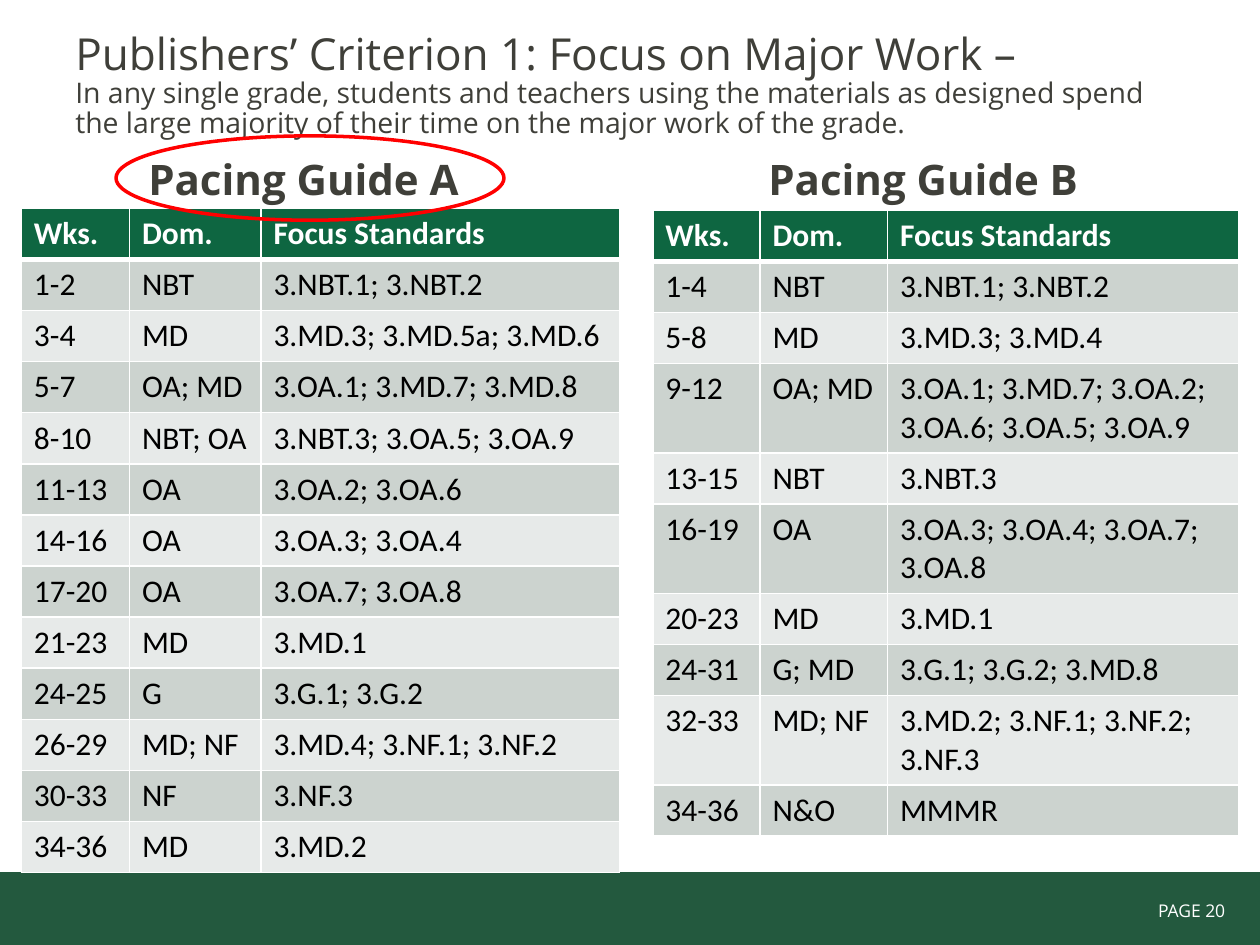
from lxml.etree import SubElement
from pptx import Presentation
from pptx.dml.color import RGBColor
from pptx.enum.shapes import MSO_SHAPE
from pptx.enum.text import MSO_ANCHOR, PP_ALIGN
from pptx.oxml.ns import qn
from pptx.util import Cm, Pt

COLORS = {
    "footer": "23593E", "header": "0E6641", "odd": "CCD3CF", "even": "E7EAE9",
    "ink": "3F3F39", "black": "000000", "white": "FFFFFF", "ring": "FF0000",
}
ROW, TALL_ROW = 1.03, 1.8
ONE_LINE_CHARS = 25
HEADER = ("Wks.", "Dom.", "Focus Standards")
GUIDE_A = [
    ("1-2", "NBT", "3.NBT.1; 3.NBT.2"),
    ("3-4", "MD", "3.MD.3; 3.MD.5a; 3.MD.6"),
    ("5-7", "OA; MD", "3.OA.1; 3.MD.7; 3.MD.8"),
    ("8-10", "NBT; OA", "3.NBT.3; 3.OA.5; 3.OA.9"),
    ("11-13", "OA", "3.OA.2; 3.OA.6"),
    ("14-16", "OA", "3.OA.3; 3.OA.4"),
    ("17-20", "OA", "3.OA.7; 3.OA.8"),
    ("21-23", "MD", "3.MD.1"),
    ("24-25", "G", "3.G.1; 3.G.2"),
    ("26-29", "MD; NF", "3.MD.4; 3.NF.1; 3.NF.2"),
    ("30-33", "NF", "3.NF.3"),
    ("34-36", "MD", "3.MD.2"),
]
GUIDE_B = [
    ("1-4", "NBT", "3.NBT.1; 3.NBT.2"),
    ("5-8", "MD", "3.MD.3; 3.MD.4"),
    ("9-12", "OA; MD", "3.OA.1; 3.MD.7; 3.OA.2; 3.OA.6; 3.OA.5; 3.OA.9"),
    ("13-15", "NBT", "3.NBT.3"),
    ("16-19", "OA", "3.OA.3; 3.OA.4; 3.OA.7; 3.OA.8"),
    ("20-23", "MD", "3.MD.1"),
    ("24-31", "G; MD", "3.G.1; 3.G.2; 3.MD.8"),
    ("32-33", "MD; NF", "3.MD.2; 3.NF.1; 3.NF.2; 3.NF.3"),
    ("34-36", "N&O", "MMMR"),
]


def rgb(name):
    return RGBColor.from_string(COLORS[name])


def style(run, size, color, font="Open Sans", bold=False):
    run.font.size = Pt(size)
    run.font.name = font
    run.font.bold = bold
    run.font.color.rgb = rgb(color)


def add_text(slide, box, text, sizes, color, anchor, bold=False):
    frame = slide.shapes.add_textbox(*map(Cm, box)).text_frame
    frame.word_wrap = True
    frame.vertical_anchor = anchor
    paragraph = frame.paragraphs[0]
    paragraph.text = text
    for run, size in zip(paragraph.runs, sizes):
        style(run, size, color, bold=bold)
    return frame


def add_title(slide, box):
    title = add_text(
        slide, box,
        "Publishers’ Criterion 1: Focus on Major Work –\v"
        "In any single grade, students and teachers using the materials as "
        "designed spend the large majority of their time on the major work of the grade.",
        (25.2, 16.2), "ink", MSO_ANCHOR.MIDDLE)
    title.margin_top = Cm(0.3)
    title.paragraphs[0].line_spacing = 0.88


def set_borders(cell, widths):
    properties = cell._tc.get_or_add_tcPr()
    for position, (side, width) in enumerate(widths.items()):
        border = SubElement(properties, qn(f"a:ln{side}"), w=str(Pt(width)))
        fill = SubElement(border, qn("a:solidFill"))
        SubElement(fill, qn("a:srgbClr"), val=COLORS["white"])
        properties.insert(position, border)


def add_guide(slide, box, name, heading_box, column_widths, weeks):
    add_text(slide, heading_box, name, (24,), "ink", MSO_ANCHOR.BOTTOM, bold=True)
    rows = [HEADER] + weeks
    heights = [TALL_ROW if len(row[2]) > ONE_LINE_CHARS else ROW for row in rows]
    left, top = box
    table = slide.shapes.add_table(
        len(rows), len(HEADER), Cm(left), Cm(top),
        Cm(sum(column_widths)), Cm(sum(heights))).table
    for column, width in zip(table.columns, column_widths):
        column.width = Cm(width)
    for number, (row, height) in enumerate(zip(rows, heights)):
        table.rows[number].height = Cm(height)
        is_header = number == 0
        band = "header" if is_header else ("even", "odd")[number % 2]
        for column, text in enumerate(row):
            cell = table.cell(number, column)
            cell.fill.solid()
            cell.fill.fore_color.rgb = rgb(band)
            cell.text_frame.text = text
            style(cell.text_frame.paragraphs[0].runs[0], 18,
                  "white" if is_header else "black", "Calibri", is_header)
            set_borders(cell, {"L": 1, "R": 1, "T": 3 if number == 1 else 1,
                               "B": 3 if is_header else 1})


def add_ring(slide, box):
    ring = slide.shapes.add_shape(MSO_SHAPE.OVAL, *map(Cm, box))
    ring.shadow.inherit = False
    ring.fill.background()
    ring.line.color.rgb = rgb("ring")
    ring.line.width = Pt(2)


def add_footer(slide, box):
    left, top, width, height = box
    band = slide.shapes.add_shape(MSO_SHAPE.RECTANGLE, *map(Cm, box))
    band.shadow.inherit = False
    band.fill.solid()
    band.fill.fore_color.rgb = rgb("footer")
    band.line.fill.background()
    page = add_text(slide, (left + width - 4.4, top + 0.43, 4.04, 0.69),
                    "PAGE 20 ", (10,), "white", MSO_ANCHOR.TOP)
    page.paragraphs[0].alignment = PP_ALIGN.RIGHT


def main():
    presentation = Presentation()
    presentation.slide_width, presentation.slide_height = Cm(25.4), Cm(19.05)
    slide = presentation.slides.add_slide(presentation.slide_layouts[6])
    add_footer(slide, (0, 17.58, 25.4, 1.47))
    add_title(slide, (1.27, 0.76, 22.86, 1.78))
    add_guide(slide, (0.43, 4.2), "Pacing Guide A", (2.74, 2.46, 11.23, 1.78),
              (2.18, 2.65, 7.23), GUIDE_A)
    add_guide(slide, (13.16, 4.24), "Pacing Guide B", (15.24, 2.46, 10.16, 1.78),
              (2.16, 2.57, 7.09), GUIDE_B)
    add_ring(slide, (2.34, 2.74, 7.82, 1.7))
    presentation.save("out.pptx")


if __name__ == "__main__":
    main()
